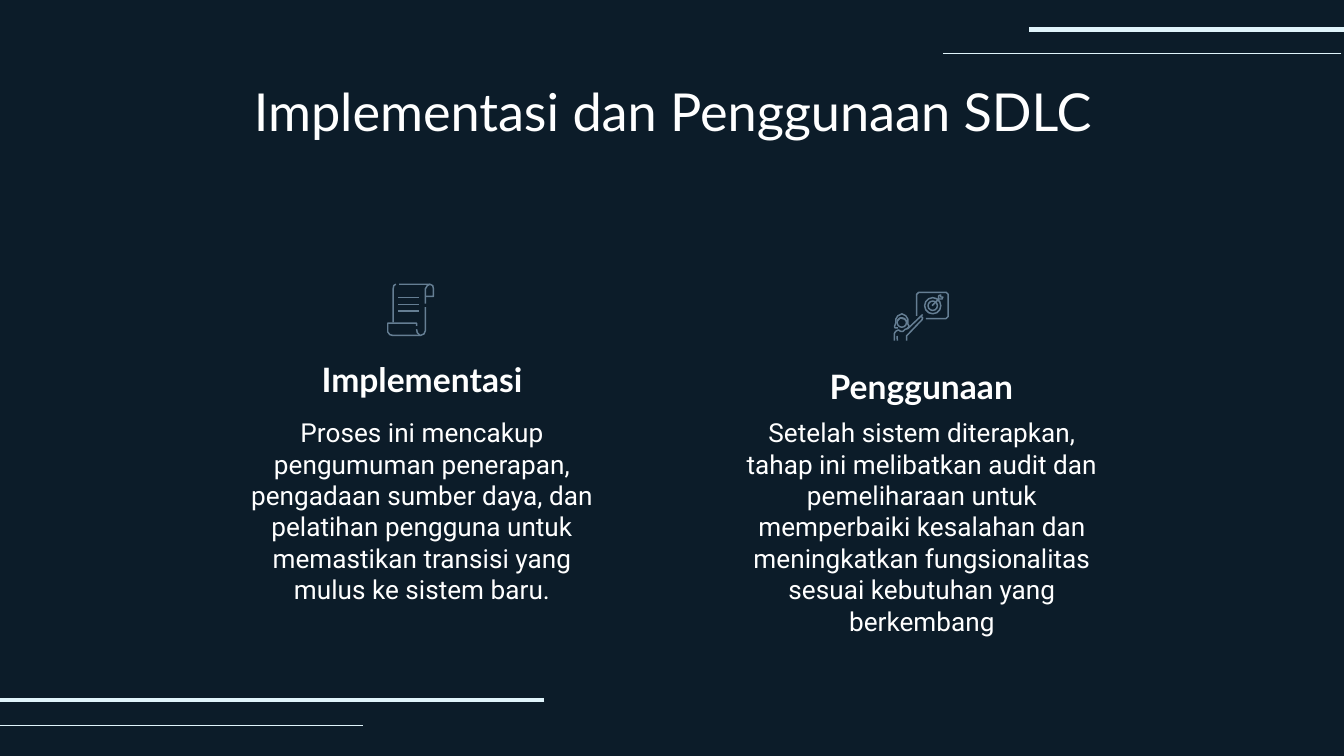
"""Build a dark slide comparing the implementation and use stages of the SDLC."""
import pptx
import pptx.dml.color
import pptx.enum.shapes
import pptx.enum.text
import pptx.util
import lxml.etree

UNIT = pptx.util.Inches(0.01)
A = "{http://schemas.openxmlformats.org/drawingml/2006/main}"
ICON = "657E93"


def paint(color_format, value):
    """Give a fill or line the colour of a hex string."""
    target = color_format
    if hasattr(color_format, "solid"):
        color_format.solid()
        target = color_format.fore_color
    else:
        target = color_format.color
    target.rgb = pptx.dml.color.RGBColor.from_string(value)


def rule(shapes, x1, x2, y, color, width):
    """Draw a horizontal line, with lengths in grid units."""
    line = shapes.add_connector(
        pptx.enum.shapes.MSO_CONNECTOR.STRAIGHT,
        *[round(length * UNIT) for length in (x1, y, x2, y)])
    paint(line.line, color)
    line.line.width = pptx.util.Pt(width)
    lxml.etree.SubElement(line._element.spPr, A + "effectLst")


deck = pptx.Presentation()
deck.slide_width = 1000 * UNIT
deck.slide_height = deck.slide_width * 9 // 16
page = deck.slides.add_slide(deck.slide_layouts[4])
paint(page.background.fill, "0C1C29")

for x1, x2, y, width in [(1000, 766, 22, 2.25), (998, 702, 40, 0.75),
                         (405, 0, 521, 2.25), (270, 0, 540, 0.75)]:
    rule(page.shapes, x1, x2, y, "E0F4FB", width)

top = pptx.enum.text.MSO_ANCHOR.TOP
bottom = pptx.enum.text.MSO_ANCHOR.BOTTOM
texts = [
    (0, (79, 49, 843, 61), top, "Lato", 28, False,
     "Implementasi dan Penggunaan SDLC"),
    (1, (169, 246, 290, 61), bottom, "Lato", 18, True, "Implementasi"),
    (2, (169, 300, 290, 111), top, "Roboto", 14, False,
     "Proses ini mencakup pengumuman penerapan, pengadaan sumber daya, dan "
     "pelatihan pengguna untuk memastikan transisi yang mulus ke sistem baru."),
    (3, (472, 251, 427, 61), bottom, "Lato", 18, True, "Penggunaan"),
    (4, (541, 300, 290, 111), top, "Roboto", 14, False,
     "Setelah sistem diterapkan, tahap ini melibatkan audit dan pemeliharaan "
     "untuk memperbaiki kesalahan dan meningkatkan fungsionalitas sesuai "
     "kebutuhan yang berkembang"),
]
for index, place, anchor, font, size, bold, words in texts:
    box = page.placeholders[index]
    box.left, box.top, box.width, box.height = [n * UNIT for n in place]
    frame = box.text_frame
    frame.text = words
    frame.word_wrap = True
    frame.auto_size = pptx.enum.text.MSO_AUTO_SIZE.NONE
    frame.vertical_anchor = anchor
    frame.margin_left = frame.margin_right = 10 * UNIT
    frame.margin_top = frame.margin_bottom = 10 * UNIT
    para = frame.paragraphs[0]
    para.alignment = pptx.enum.text.PP_ALIGN.CENTER
    para.space_before = pptx.util.Pt(0)
    para.font.name = font
    para.font.size = pptx.util.Pt(size)
    para.font.bold = bold
    paint(para.font.fill, "FFFFFF")
    properties = para._p.get_or_add_pPr()
    properties.set("marL", "0")
    properties.set("indent", "0")
    bullet = lxml.etree.Element(A + "buNone")
    properties.find(A + "defRPr").addprevious(bullet)

scroll = [
    [(294.5, 211.5), (293, 212.5), (292.5, 215), (292.5, 240)],
    [(310, 242.5), (310, 240.5), (288.5, 240.5), (288.5, 247), (290, 249),
     (292, 249.5), (313, 249.5), (315.5, 248.5), (316.5, 246), (316.5, 228.5)],
    [(310, 245), (310.5, 247.5), (312.5, 249.5)],
    [(297, 211.5), (320, 211.5), (322, 212.5), (322.5, 215), (322.5, 220.5),
     (317, 220.5)],
    [(320, 211.5), (318, 212.5), (316.5, 215), (316.5, 226)],
]
presenter = [
    [(665.5, 253.5), (665.5, 248), (666.5, 246.5), (668.5, 245.5),
     (670, 246.5), (672, 246.5), (673.5, 245), (675.5, 244.5), (686.5, 234)],
    [(674.5, 253.5), (674.5, 250), (686, 238), (686.5, 236.5), (685, 235)],
    [(668, 244), (666, 244), (665.5, 243), (666.5, 240.5), (666.5, 237.5),
     (668, 235), (671, 233.5), (674, 235), (675.5, 237.5), (675.5, 241),
     (676.5, 243), (675, 244.5)],
    [(668, 238.5), (670, 236.5), (673, 237.5), (675, 239.5)],
    [(667.5, 250), (667.6, 253.5)],
]
board = [
    [(682, 235), (682, 219), (683.5, 217.5), (704, 217.5), (705.5, 219),
     (705.5, 235.5), (704, 237), (689, 237)],
    [(693.5, 227.5), (698.5, 222.5), (698.5, 220), (700, 219.5), (700, 221),
     (701.5, 221), (701, 222.5), (698.5, 222.5)],
]
drawings = []
for points in scroll + presenter + board:
    corners = [(x * UNIT, y * UNIT) for x, y in points]
    builder = page.shapes.build_freeform(*corners[0], scale=1)
    builder.add_line_segments(corners[1:], close=False)
    drawings.append(builder.convert_to_shape())

for x, y, radius in [(671, 240, 3.5), (694, 227.5, 6), (694, 227.5, 3.5)]:
    drawings.append(page.shapes.add_shape(
        pptx.enum.shapes.MSO_SHAPE.OVAL,
        *[round(n * UNIT) for n in (x - radius, y - radius, 2 * radius, 2 * radius)]))

for drawing in drawings:
    drawing.shadow.inherit = False
    drawing.fill.background()
    paint(drawing.line, ICON)
    drawing.line.width = pptx.util.Pt(0.8)

for row in range(3):
    rule(page.shapes, 296.5, 311.5, 221.5 + 5 * row, ICON, 0.8)

deck.save("out.pptx")
